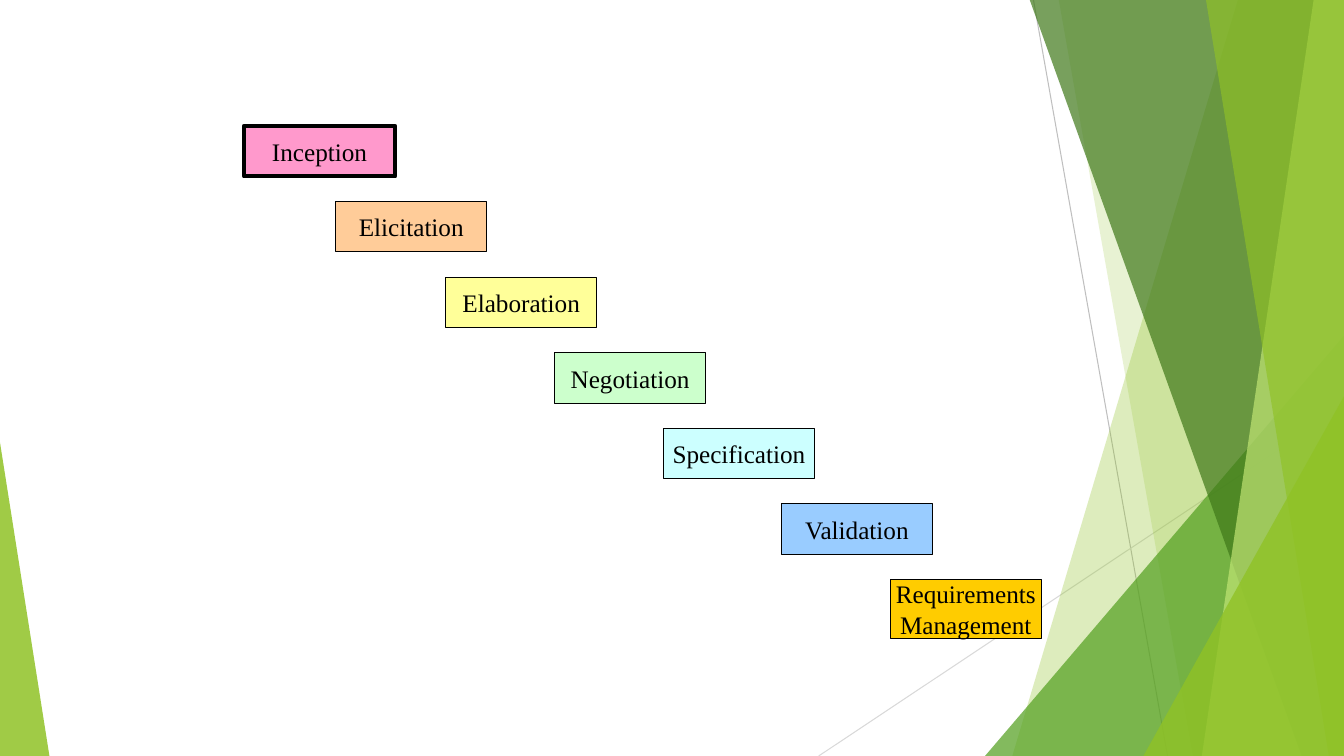
import pptx
import pptx.dml.color
import pptx.enum.shapes
import pptx.enum.text
import pptx.oxml
import pptx.oxml.ns
import pptx.util
from dataclasses import dataclass
from lxml import etree

Inches = pptx.util.Inches
Pt = pptx.util.Pt
MSO_SHAPE = pptx.enum.shapes.MSO_SHAPE

WIDTH, HEIGHT = 13.33, 7.5
FACET_TOP = -0.01


@dataclass(frozen=True)
class Theme:
    font: str = "Times New Roman"
    text_size: float = 18
    thin: float = 0.75
    thick: float = 3
    ink: str = "000000"
    dark_ray: str = "BFBFBF"
    light_ray: str = "D9D9D9"
    lime: str = "90C226"
    green: str = "54A021"
    forest: str = "3F7819"
    pale_lime: str = "C0E474"
    pink: str = "FF99CC"
    peach: str = "FFCC99"
    yellow: str = "FFFF99"
    mint: str = "CCFFCC"
    aqua: str = "CCFFFF"
    sky: str = "99CCFF"
    gold: str = "FFCC00"


class SlideBuilder:
    def __init__(self, slide, theme):
        self.slide = slide
        self.theme = theme

    def rgb(self, color):
        return pptx.dml.color.RGBColor.from_string(color)

    def fill(self, shape, color, opacity=100):
        shape.shadow.inherit = False
        shape.fill.solid()
        shape.fill.fore_color.rgb = self.rgb(color)
        if opacity < 100:
            qn = pptx.oxml.ns.qn
            srgb = shape.fill._xPr.find(qn("a:solidFill")).find(qn("a:srgbClr"))
            etree.SubElement(srgb, qn("a:alpha")).set("val", str(opacity * 1000))

    def ray(self, start, end, color):
        points = [Inches(value) for value in (*start, *end)]
        ray = self.slide.shapes.add_connector(
            pptx.enum.shapes.MSO_CONNECTOR.STRAIGHT, *points)
        ray.line.color.rgb = self.rgb(color)
        ray.line.width = Pt(self.theme.thin)
        etree.SubElement(ray._element.spPr, pptx.oxml.ns.qn("a:effectLst"))

    def facet(self, top_left, top_right, bottom_right, bottom_left, color, opacity):
        corners = [(Inches(x), Inches(y)) for x, y in (
            (top_left, FACET_TOP), (top_right, FACET_TOP),
            (bottom_right, HEIGHT), (bottom_left, HEIGHT))]
        outline = self.slide.shapes.build_freeform(*corners[0])
        outline.add_line_segments(corners[1:], close=True)
        facet = outline.convert_to_shape()
        self.fill(facet, color, opacity)
        facet.line.fill.background()

    def corner(self, left, top, width, apex, color, opacity):
        corner = self.slide.shapes.add_shape(
            MSO_SHAPE.ISOSCELES_TRIANGLE, Inches(left), Inches(top),
            Inches(width), Inches(HEIGHT - top))
        corner.adjustments[0] = apex
        self.fill(corner, color, opacity)
        corner.line.fill.background()

    def stage(self, label, left, top, height, color, border):
        stage = self.slide.shapes.add_shape(
            MSO_SHAPE.RECTANGLE, Inches(left), Inches(top), Inches(1.5), Inches(height))
        self.fill(stage, color)
        stage.line.color.rgb = self.rgb(self.theme.ink)
        stage.line.width = Pt(border)
        frame = stage.text_frame
        frame.word_wrap = False
        frame.vertical_anchor = pptx.enum.text.MSO_ANCHOR.MIDDLE
        frame.text = label
        for paragraph in frame.paragraphs:
            paragraph.alignment = pptx.enum.text.PP_ALIGN.CENTER
            for run in paragraph.runs:
                run.font.name = self.theme.font
                run.font.size = Pt(self.theme.text_size)
                run.font.color.rgb = self.rgb(self.theme.ink)


def main():
    deck = pptx.Presentation()
    deck.slide_width, deck.slide_height = Inches(WIDTH), Inches(HEIGHT)
    theme = Theme()
    builder = SlideBuilder(deck.slides.add_slide(deck.slide_layouts[6]), theme)

    # Background rays and facets, back to front
    builder.ray((10.25, 0), (11.58, HEIGHT), theme.dark_ray)
    builder.ray((WIDTH, 4.03), (8.12, HEIGHT), theme.light_ray)
    builder.facet(12.28, WIDTH, WIDTH, 10.04, theme.lime, 30)
    builder.facet(10.5, WIDTH, WIDTH, 11.83, theme.lime, 20)
    builder.corner(9.77, 3.33, 3.56, 1, theme.green, 72)
    builder.facet(10.21, WIDTH, WIDTH, 12.91, theme.forest, 70)
    builder.facet(13.03, WIDTH, WIDTH, 11.92, theme.pale_lime, 70)
    builder.facet(11.96, WIDTH, WIDTH, 13.18, theme.lime, 65)
    builder.corner(11.34, 3.93, 1.99, 1, theme.lime, 80)
    builder.corner(0, 4.39, 0.49, 0, theme.lime, 85)

    # Staircase of requirements engineering stages
    stages = [
        ("Inception", 2.42, 0.5, theme.pink, theme.thick),
        ("Elicitation", 3.33, 0.5, theme.peach, theme.thin),
        ("Elaboration", 4.42, 0.5, theme.yellow, theme.thin),
        ("Negotiation", 5.5, 0.5, theme.mint, theme.thin),
        ("Specification", 6.58, 0.5, theme.aqua, theme.thin),
        ("Validation", 7.75, 0.5, theme.sky, theme.thin),
        ("Requirements\nManagement", 8.83, 0.58, theme.gold, theme.thin),
    ]
    for step, (label, left, height, color, border) in enumerate(stages):
        builder.stage(label, left, 1.25 + 0.75 * step, height, color, border)

    deck.save("out.pptx")


if __name__ == "__main__":
    main()
